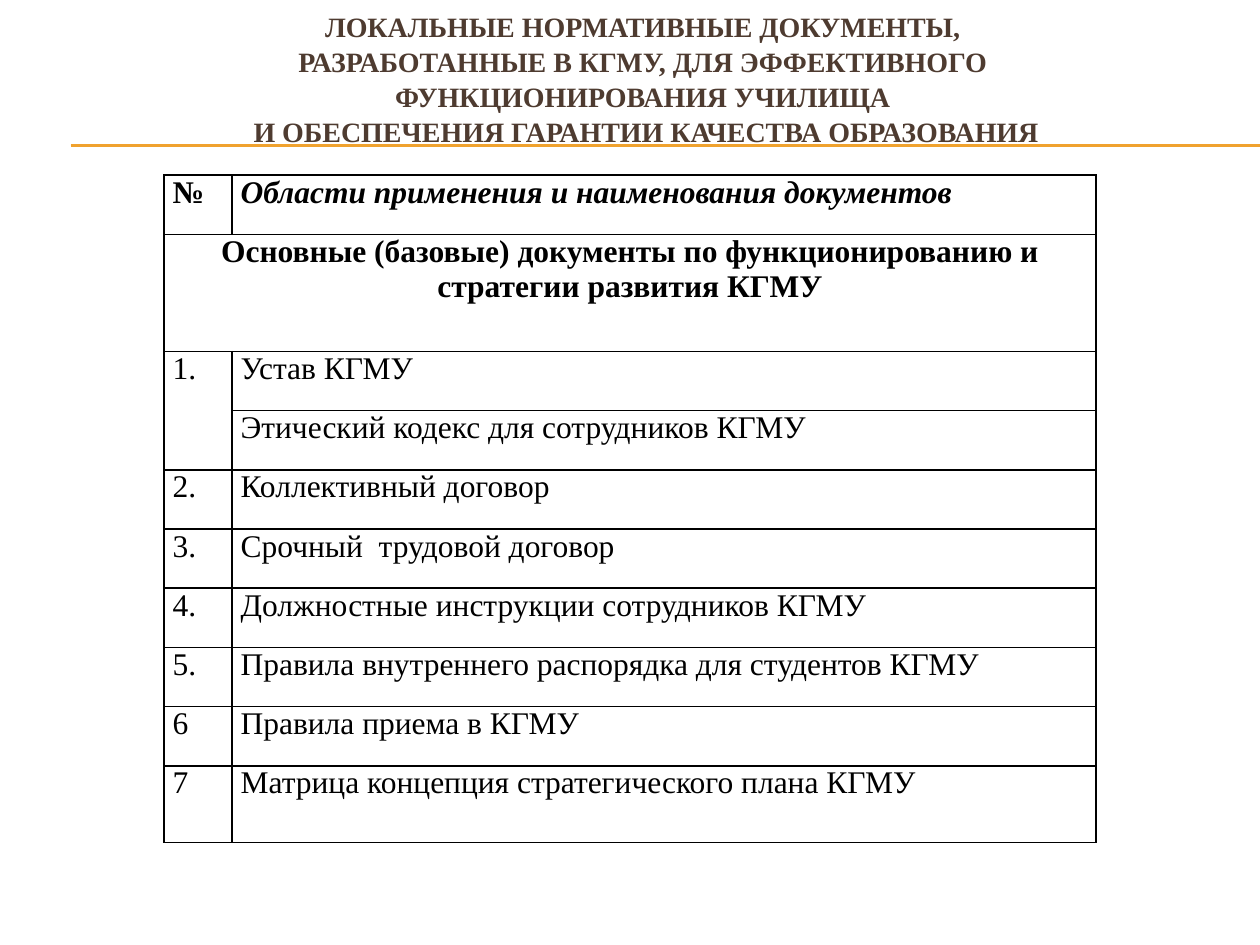
from lxml import etree
from pptx import Presentation, util as u
from pptx.dml.color import RGBColor
from pptx.enum import shapes, text
from pptx.oxml import ns


def paint(color_format, value):
    color_format.rgb = RGBColor.from_string(value)


def write(paragraph, wording, color, **font_values):
    paragraph.text = wording
    for run in paragraph.runs:
        for name, value in font_values.items():
            setattr(run.font, name, value)
        paint(run.font.color, color)


deck = Presentation()
deck.slide_width, deck.slide_height = u.Inches(10), u.Inches(7.5)
slide = deck.slides.add_slide(deck.slide_layouts[5])
typeface = "Times New Roman"

for height in (1.15, 1.16):
    rule = slide.shapes.add_connector(
        shapes.MSO_CONNECTOR.STRAIGHT,
        u.Inches(0.56), u.Inches(height), deck.slide_width, u.Inches(height))
    rule.line.width = u.Pt(0.75)
    paint(rule.line.color, "F0A22E")
    etree.SubElement(rule._element.spPr, ns.qn("a:effectLst"))

heading = slide.shapes.title
for side, length in dict(left=0.43, top=0.13, width=9.4, height=0.98).items():
    setattr(heading, side, u.Inches(length))
heading.text_frame.auto_size = text.MSO_AUTO_SIZE.NONE
heading.text_frame.vertical_anchor = text.MSO_ANCHOR.MIDDLE
headline = heading.text_frame.paragraphs[0]
write(headline,
      "ЛОКАЛЬНЫЕ НОРМАТИВНЫЕ ДОКУМЕНТЫ, \n"
      "РАЗРАБОТАННЫЕ В КГМУ, ДЛЯ ЭФФЕКТИВНОГО \n"
      "ФУНКЦИОНИРОВАНИЯ УЧИЛИЩА \n"
      "И ОБЕСПЕЧЕНИЯ ГАРАНТИИ КАЧЕСТВА ОБРАЗОВАНИЯ",
      "4E3B30", name=typeface, size=u.Pt(16), bold=True)
headline.alignment = text.PP_ALIGN.CENTER
headline.line_spacing = 1.04

documents = [
    ("№", "Области применения и наименования документов"),
    ("Основные (базовые) документы по функционированию и\n"
     "стратегии развития КГМУ", ""),
    ("1.", "Устав КГМУ"),
    ("", "Этический кодекс для сотрудников КГМУ"),
    ("2.", "Коллективный договор"),
    ("3.", "Срочный  трудовой договор"),
    ("4.", "Должностные инструкции сотрудников КГМУ"),
    ("5.", "Правила внутреннего распорядка для студентов КГМУ"),
    ("6", "Правила приема в КГМУ"),
    ("7", "Матрица концепция стратегического плана КГМУ"),
]
section_row, charter_row, last_row = 1, 2, len(documents) - 1
row_height = 0.47
special_heights = {section_row: 0.93, last_row: 0.61}

register = slide.shapes.add_table(
    len(documents), 2, u.Inches(1.3), u.Inches(1.39),
    u.Inches(7.4), u.Inches(5.28)).table
register.first_row = register.horz_banding = False
for column, width in zip(register.columns, (0.54, 6.86)):
    column.width = u.Inches(width)

margins = dict(margin_left=0.07, margin_right=0.07, margin_top=0, margin_bottom=0)
for r, entry in enumerate(documents):
    register.rows[r].height = u.Inches(special_heights.get(r, row_height))
    for c, wording in enumerate(entry):
        cell = register.cell(r, c)
        for margin, length in margins.items():
            setattr(cell, margin, u.Inches(length))
        properties = cell._tc.get_or_add_tcPr()
        for edge in ("lnL", "lnR", "lnT", "lnB"):
            border = etree.SubElement(properties, ns.qn(f"a:{edge}"), w=str(u.Pt(1)))
            ink = etree.SubElement(border, ns.qn("a:solidFill"))
            etree.SubElement(ink, ns.qn("a:srgbClr"), val="000000")
        cell.fill.background()
        if not wording:
            continue
        cell.text = wording
        for paragraph in cell.text_frame.paragraphs:
            write(paragraph, paragraph.text, "000000", name=typeface, size=u.Pt(18),
                  bold=r <= section_row, italic=r == 0 and c == 1)
            if r == section_row:
                paragraph.alignment = text.PP_ALIGN.CENTER

register.cell(section_row, 0).merge(register.cell(section_row, 1))
register.cell(charter_row, 0).merge(register.cell(charter_row + 1, 0))

deck.save("out.pptx")
